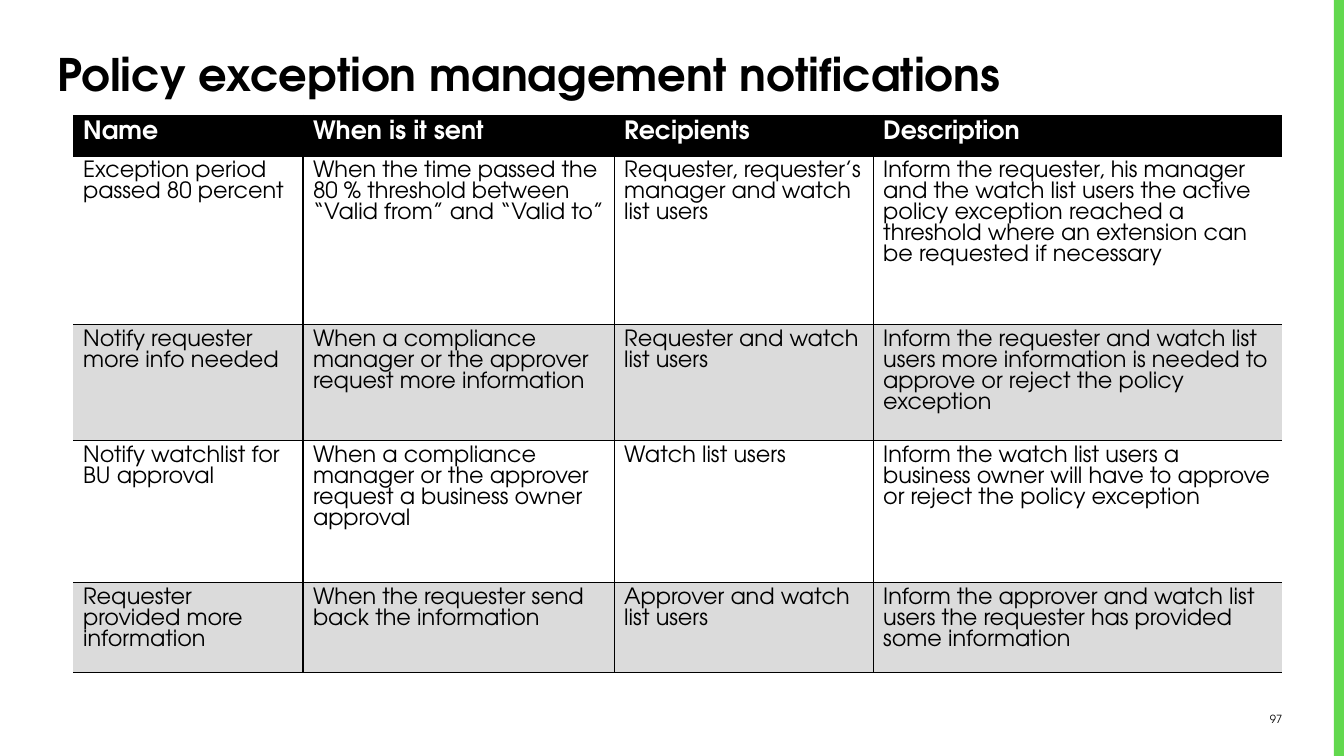
from lxml import etree
from pptx import Presentation
from pptx.dml.color import RGBColor
from pptx.enum.shapes import MSO_SHAPE
from pptx.enum.text import MSO_ANCHOR as ANCHOR, PP_ALIGN as ALIGN
from pptx.oxml import parse_xml
from pptx.oxml.ns import nsdecls
from pptx.util import Pt

FONT = "TeX Gyre Adventor"
BLACK, WHITE, GREY, GREEN = "000000", "FFFFFF", "DBDBDB", "62D84E"


def rgb(hex_color):
    return RGBColor.from_string(hex_color)


def write(tf, text, size, color=BLACK, bold=False, **formats):
    tf.word_wrap = True
    p = tf.paragraphs[0]
    for name, value in formats.items():
        setattr(p, name, value)
    r = p.add_run()
    r.text = text
    for name, value in {"name": FONT, "size": Pt(size), "bold": bold}.items():
        setattr(r.font, name, value)
    r.font.color.rgb = rgb(color)


prs = Presentation()
prs.slide_width, prs.slide_height = Pt(960), Pt(540)
s = prs.slides.add_slide(prs.slide_layouts[6])

sp = s.shapes.add_shape(MSO_SHAPE.RECTANGLE, Pt(952.8), Pt(0), Pt(7.2), Pt(540))
sp.shadow.inherit = False
sp.fill.solid()
sp.fill.fore_color.rgb = rgb(GREEN)
sp.line.fill.background()

labels = [
    ("97", (870.5, 504.7, 52.6, 18), 8, False, ALIGN.RIGHT),
    ("Policy exception management notifications", (33.8, 26.6, 884.2, 52.6), 32, True, ALIGN.LEFT),
]
for text, box, size, bold, align in labels:
    tf = s.shapes.add_textbox(*map(Pt, box)).text_frame
    tf.vertical_anchor = ANCHOR.MIDDLE
    write(tf, text, size, bold=bold, alignment=align)

rows = [
    ("Name", "When is it sent", "Recipients", "Description"),
    ("Exception period passed 80 percent",
     "When the time passed the 80 % threshold between “Valid from” and “Valid to”",
     "Requester, requester’s manager and watch list users",
     "Inform the requester, his manager and the watch list users the active policy exception "
     "reached a threshold where an extension can be requested if necessary"),
    ("Notify requester more info needed",
     "When a compliance manager or the approver request more information",
     "Requester and watch list users",
     "Inform the requester and watch list users more information is needed to approve or reject "
     "the policy exception"),
    ("Notify watchlist for BU approval",
     "When a compliance manager or the approver request a business owner approval",
     "Watch list users",
     "Inform the watch list users a business owner will have to approve or reject the policy exception"),
    ("Requester provided more information",
     "When the requester send back the information",
     "Approver and watch list users",
     "Inform the approver and watch list users the requester has provided some information"),
]
widths = [164.2, 222.3, 185, 292.3]
heights = [29, 120.4, 82.8, 101.4, 64.2]

table = s.shapes.add_table(len(rows), len(widths), Pt(52.2), Pt(82.4),
                           Pt(sum(widths)), Pt(sum(heights))).table
for column, width in zip(table.columns, widths):
    column.width = Pt(width)

for i, (row, height) in enumerate(zip(rows, heights)):
    table.rows[i].height = Pt(height)
    header = i == 0
    fill = BLACK if header else (WHITE if i % 2 else GREY)
    for j, text in enumerate(row):
        cell = table.cell(i, j)
        write(cell.text_frame, text, 18 if header else 16, WHITE if header else BLACK,
              header, line_spacing=Pt(17 if header else 15))
        tcPr = cell._tc.get_or_add_tcPr()
        for side in ("lnL", "lnR", "lnT", "lnB"):
            outer = (side == "lnL" and j == 0) or (side == "lnR" and j == len(row) - 1)
            ln = parse_xml(f'<a:{side} {nsdecls("a")} w="{Pt(1)}"/>')
            if outer:
                etree.SubElement(ln, "{%s}noFill" % ln.nsmap["a"])
            else:
                paint = etree.SubElement(ln, "{%s}solidFill" % ln.nsmap["a"])
                etree.SubElement(paint, "{%s}srgbClr" % ln.nsmap["a"], val=BLACK)
            tcPr.append(ln)
        cell.fill.solid()
        cell.fill.fore_color.rgb = rgb(fill)

prs.save("out.pptx")
